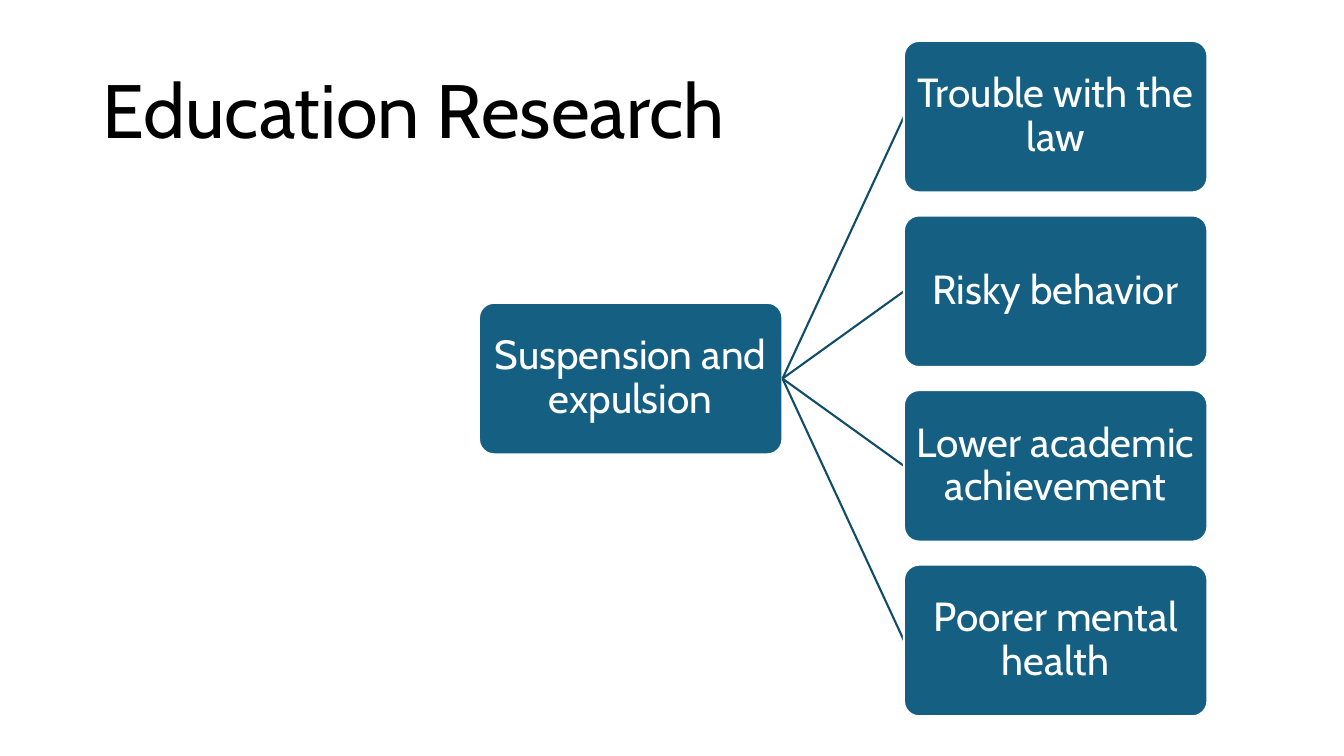
from lxml.etree import SubElement
from pptx import Presentation
from pptx.dml.color import RGBColor
from pptx.enum.shapes import MSO_CONNECTOR, MSO_SHAPE
from pptx.enum.text import MSO_ANCHOR, MSO_AUTO_SIZE, PP_ALIGN
from pptx.oxml.ns import qn
from pptx.util import Cm, Pt

TITLE = "Education Research"
CAUSE = "Suspension and expulsion"
EFFECTS = [
    "Trouble with the law",
    "Risky behavior",
    "Lower academic achievement",
    "Poorer mental health",
]

FONT = "Cabin"
BLACK, WHITE, BLUE, DARK_BLUE = "000000", "FFFFFF", "156082", "114D68"
LINE_WIDTH = Pt(1.5)

# Lengths in centimetres
BOX_WIDTH, BOX_HEIGHT = 7.65, 3.82
CAUSE_LEFT, EFFECT_LEFT = 12.07, 22.78
TOP, PITCH = 1.03, 4.4
CAUSE_TOP = TOP + PITCH * (len(EFFECTS) - 1) / 2


def color(hex_string):
    return RGBColor.from_string(hex_string)


def write(shape, text, size, text_color, alignment, margins):
    frame = shape.text_frame
    frame.text = text
    settings = {
        "word_wrap": True,
        "auto_size": MSO_AUTO_SIZE.NONE,
        "vertical_anchor": MSO_ANCHOR.MIDDLE,
        **margins,
    }
    for name, value in settings.items():
        setattr(frame, name, value)
    paragraph = frame.paragraphs[0]
    paragraph.alignment = alignment
    paragraph.line_spacing = 0.9
    font = paragraph.runs[0].font
    font.name, font.size = FONT, Pt(size)
    font.color.rgb = color(text_color)


def add_box(slide, text, left, top):
    box = slide.shapes.add_shape(
        MSO_SHAPE.ROUNDED_RECTANGLE,
        Cm(left), Cm(top), Cm(BOX_WIDTH), Cm(BOX_HEIGHT),
    )
    box.adjustments[0] = 0.1
    box.shadow.inherit = False
    box.fill.solid()
    box.fill.fore_color.rgb = color(BLUE)
    box.line.color.rgb = color(WHITE)
    box.line.width = LINE_WIDTH
    sides = ("left", "top", "right", "bottom")
    margins = {f"margin_{side}": Cm(0.16) for side in sides}
    write(box, text, 29, WHITE, PP_ALIGN.CENTER, margins)
    return box


def add_effect(slide, cause_box, text, top):
    """Draw the link first so that the effect box lies over its end."""
    link = slide.shapes.add_connector(MSO_CONNECTOR.STRAIGHT, 0, 0, 0, 0)
    link.line.color.rgb = color(DARK_BLUE)
    link.line.width = LINE_WIDTH
    SubElement(link._element.spPr, qn("a:effectLst"))
    effect_box = add_box(slide, text, EFFECT_LEFT, top)
    link.begin_connect(cause_box, 3)
    link.end_connect(effect_box, 1)


def main():
    presentation = Presentation()
    presentation.slide_width = Cm(33.87)
    presentation.slide_height = Cm(19.05)
    slide = presentation.slides.add_slide(presentation.slide_layouts[5])

    title = slide.shapes.title
    title.left, title.top = Cm(2.33), Cm(TOP)
    title.width, title.height = Cm(29.21), Cm(3.68)
    write(title, TITLE, 54, BLACK, PP_ALIGN.LEFT, {})

    cause_box = add_box(slide, CAUSE, CAUSE_LEFT, CAUSE_TOP)
    for row, effect in enumerate(EFFECTS):
        add_effect(slide, cause_box, effect, TOP + row * PITCH)

    presentation.save("out.pptx")


if __name__ == "__main__":
    main()
